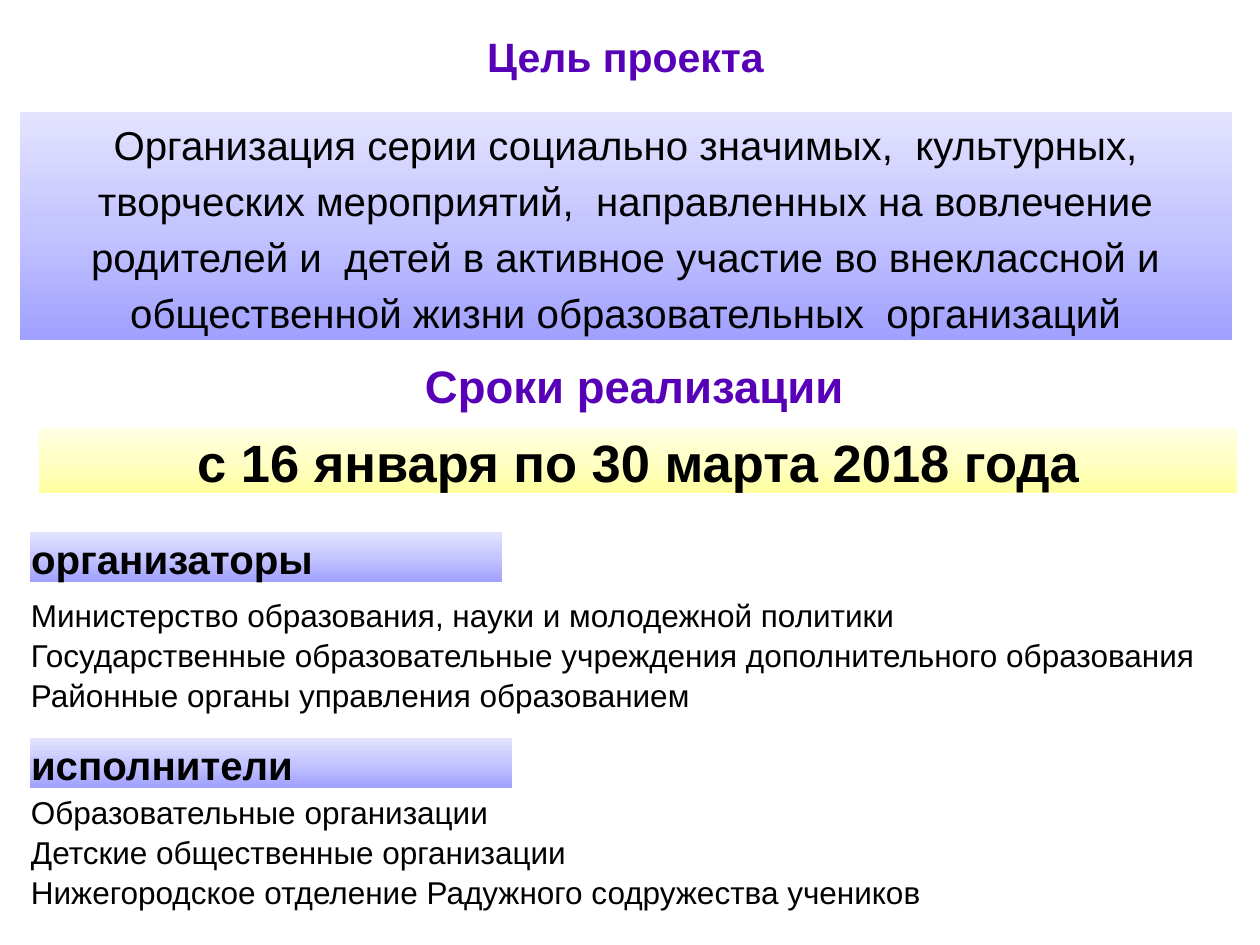
from copy import deepcopy
from dataclasses import dataclass

from pptx import Presentation
from pptx.dml.color import RGBColor
from pptx.enum import shapes, text
from pptx.oxml.ns import qn
from pptx.util import Emu, Pt

PX = 914400 / 126
FONT = "Arial"
BLACK, VIOLET = "000000", "5700B7"
BLUES = ("A0A0FF", "C5C5FF", "E3E3FF")
YELLOWS = ("FFFFA0", "FFFFC5", "FFFFE3")
LEFT, CENTER = text.PP_ALIGN.LEFT, text.PP_ALIGN.CENTER


@dataclass
class Block:
    """A run of paragraphs, on a gradient band if it has colours for one."""
    left: int
    top: int
    width: int
    height: int
    lines: tuple[str, ...]
    size: float
    bold: bool = False
    color: str = BLACK
    align: text.PP_ALIGN = LEFT
    band: tuple[str, ...] = ()
    inset: int = 2
    spacing: float = 1.0
    before: float = 1.2


def px(length: int) -> Emu:
    return Emu(round(length * PX))


def rgb(value: str) -> RGBColor:
    return RGBColor.from_string(value)


def fill_band(box, colors: tuple[str, ...]) -> None:
    """Shade from the first colour at the bottom to the last at the top."""
    box.shadow.inherit = False
    box.line.fill.background()
    box.fill.gradient()
    box.fill.gradient_angle = 90
    stop_list = box._element.spPr.find(".//" + qn("a:gsLst"))
    stop_list.insert(1, deepcopy(stop_list[0]))
    for index, (stop, color) in enumerate(zip(box.fill.gradient_stops, colors)):
        stop.color.rgb = rgb(color)
        stop.position = index / (len(colors) - 1)


def draw_block(page, block: Block) -> None:
    place = [px(n) for n in (block.left, block.top, block.width, block.height)]
    if block.band:
        box = page.shapes.add_shape(shapes.MSO_SHAPE.RECTANGLE, *place)
        fill_band(box, block.band)
    else:
        box = page.shapes.add_textbox(*place)

    frame = box.text_frame
    frame.word_wrap = True
    frame.auto_size = text.MSO_AUTO_SIZE.SHAPE_TO_FIT_TEXT
    frame.vertical_anchor = text.MSO_ANCHOR.TOP
    frame.margin_left = frame.margin_right = frame.margin_bottom = 0
    frame.margin_top = px(block.inset)

    for index, line in enumerate(block.lines):
        para = frame.add_paragraph() if index else frame.paragraphs[0]
        para.alignment = block.align
        para.line_spacing = block.spacing
        para.space_before = Pt(block.before)
        para._p.get_or_add_pPr().set("marL", str(px(1)))
        span = para.add_run()
        span.text = line
        span.font.name = FONT
        span.font.size = Pt(block.size)
        span.font.bold = block.bold
        span.font.color.rgb = rgb(block.color)


BLOCKS = (
    # Goal
    Block(39, 30, 1172, 49, ("Цель проекта",), 23.4, True, VIOLET, CENTER),
    Block(20, 112, 1212, 228, (
        "Организация серии социально значимых,  культурных, творческих "
        "мероприятий,  направленных на вовлечение родителей и  детей в "
        "активное участие во внеклассной и общественной жизни "
        "образовательных  организаций",
    ), 23, align=CENTER, band=BLUES, inset=1, spacing=1.16, before=0.9),
    # Dates
    Block(98, 356, 1072, 58, ("Сроки реализации",), 26, True, VIOLET, CENTER),
    Block(39, 428, 1198, 65, ("с 16 января по 30 марта 2018 года",), 30, True,
          align=CENTER, band=YELLOWS),
    # Organisers
    Block(30, 532, 472, 50, ("организаторы",), 23, True, band=BLUES),
    Block(30, 594, 1221, 120, (
        "Министерство образования, науки и молодежной политики",
        "Государственные образовательные учреждения дополнительного образования",
        "Районные органы управления образованием",
    ), 18),
    # Performers
    Block(30, 738, 482, 50, ("исполнители",), 23, True, band=BLUES),
    Block(30, 791, 1198, 120, (
        "Образовательные организации",
        "Детские общественные организации",
        "Нижегородское отделение Радужного содружества учеников",
    ), 18),
)


def main() -> None:
    deck = Presentation()
    deck.slide_width, deck.slide_height = px(1260), px(945)
    page = deck.slides.add_slide(deck.slide_layouts[6])
    for block in BLOCKS:
        draw_block(page, block)
    deck.save("out.pptx")


if __name__ == "__main__":
    main()
